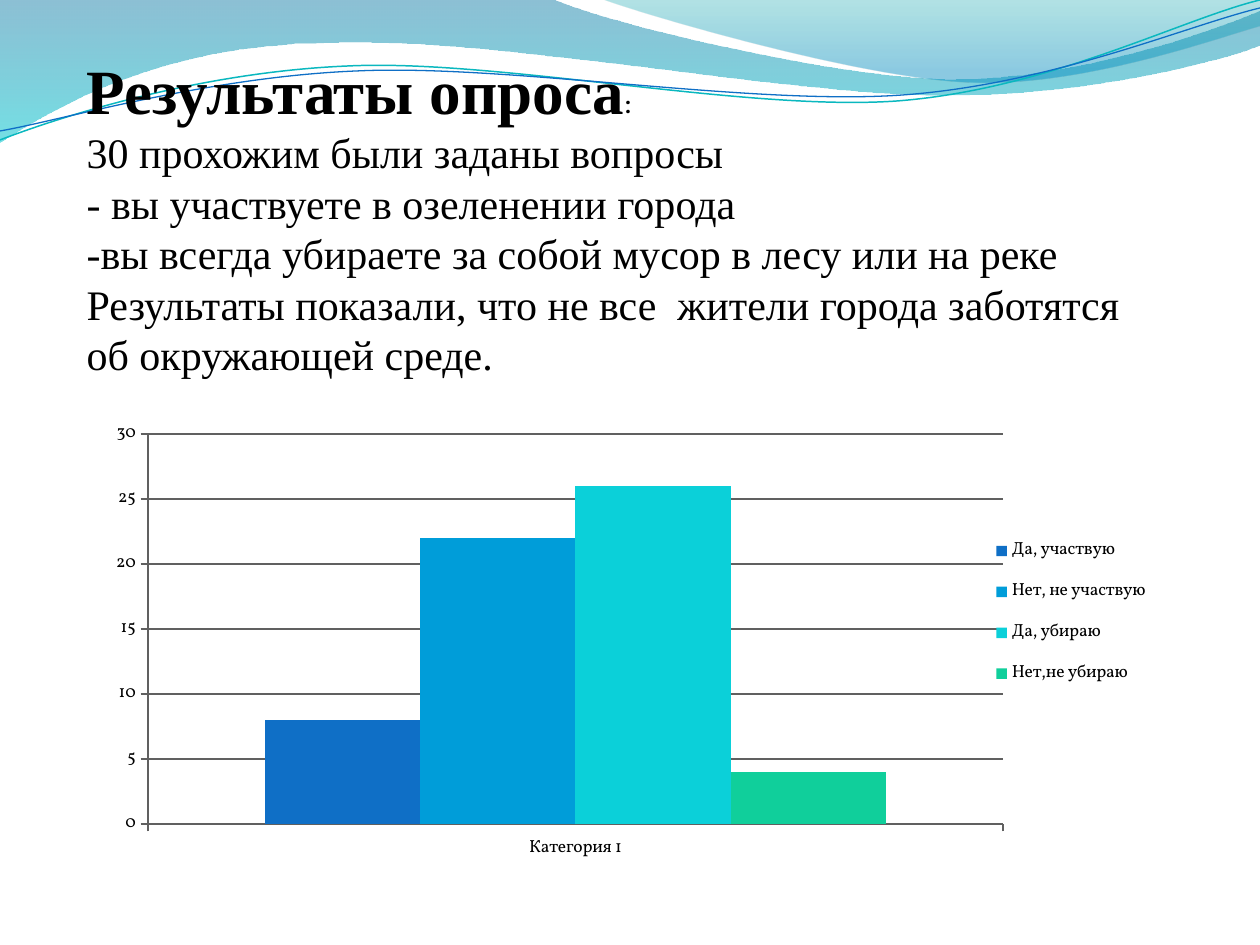
from dataclasses import dataclass

from lxml.etree import SubElement
from pptx import Presentation
from pptx.chart.data import CategoryChartData
from pptx.dml.color import RGBColor
from pptx.enum.chart import XL_CHART_TYPE as ChartType
from pptx.enum.chart import XL_LEGEND_POSITION as LegendPosition
from pptx.enum.chart import XL_TICK_MARK as TickMark
from pptx.enum.text import MSO_ANCHOR, MSO_AUTO_SIZE, PP_ALIGN
from pptx.oxml.ns import qn
from pptx.util import Pt

SCALE = 914400 / 126  # EMU per px


@dataclass(frozen=True)
class Theme:
    text: str = "000000"
    grid: str = "606060"
    serif: str = "Times New Roman"
    chart_font: str = "Vollkorn"
    title_size: int = 36
    colon_size: int = 18
    body_size: int = 24
    chart_size: int = 10
    bars: tuple = ("0F6FC6", "009DD9", "0BD0D9", "10CF9B")
    # Gradient stops: position, colour, opacity in percent
    wide_wave: tuple = ((0, "0074A1", 45), (1, "00C6CF", 55))
    corner_wave: tuple = ((0, "00A1A9", 30), (0.8, "008BBF", 45))
    upper_curve: tuple = ("0AB8BF", 0.85)
    lower_curve: tuple = ("0F6FC6", 0.75)


THEME = Theme()

# Outlines are a start point, then line ends (2 numbers) or Bézier curves (6 numbers).
WIDE_WAVE = [
    (0, 0), (554, 0), (600, 21, 837, 79, 955, 79), (1074, 79, 1207, 33, 1260, 11),
    (1260, 45), (1239, 55, 1096, 96, 940, 95), (784, 95, 481, 35, 324, 43),
    (163, 45, 58, 105, 0, 142),
]
CORNER_WAVE = [
    (604, 0), (641, 14, 859, 78, 969, 82), (1079, 87, 1211, 40, 1260, 26), (1260, 0),
]
UPPER_CURVE = [
    (0, 140), (60, 117, 199, 72, 349, 66), (498, 59, 747, 112, 898, 101),
    (1050, 89, 1182, 19, 1260, 0),
]
LOWER_CURVE = [
    (0, 131), (59, 121, 207, 77, 357, 71), (508, 64, 752, 106, 903, 95),
    (1053, 84, 1186, 26, 1260, 8),
]

HEADING = "Результаты опроса"
BODY_LINES = [
    "30 прохожим были заданы вопросы",
    "- вы участвуете в озеленении города",
    "-вы всегда убираете за собой мусор в лесу или на реке",
    "Результаты показали, что не все  жители города заботятся об окружающей среде.",
]
ANSWERS = [
    ("Да, участвую", 8), ("Нет, не участвую", 22),
    ("Да, убираю", 26), ("Нет,не убираю", 4),
]


def px(*lengths):
    return [round(length * SCALE) for length in lengths]


def rgb(value):
    return RGBColor.from_string(value)


def set_font(font, name, size, bold=False):
    font.name, font.size, font.bold = name, Pt(size), bold
    font.color.rgb = rgb(THEME.text)


def add_outline(slide, outline, box, closed):
    """Draw through all points, then join each curve's three lines into one Bézier."""
    left, top = box[:2]
    points = [
        (left + part[i], top + part[i + 1])
        for part in outline for i in range(0, len(part), 2)
    ]
    builder = slide.shapes.build_freeform(*points[0], scale=SCALE)
    builder.add_line_segments(points[1:], close=closed)
    shape = builder.convert_to_shape()
    shape.shadow.inherit = False
    lines = iter(list(shape._element.iter(qn("a:lnTo"))))
    for part in outline[1:]:
        line = next(lines)
        if len(part) == 6:
            curve = line.makeelement(qn("a:cubicBezTo"), {})
            line.addprevious(curve)
            for segment in (line, next(lines), next(lines)):
                curve.append(segment[0])
                segment.getparent().remove(segment)
    return shape


def add_wave(slide, outline, stops, box):
    shape = add_outline(slide, outline, box, closed=True)
    shape.line.fill.background()
    shape.fill.gradient()
    shape.fill.gradient_angle = 270
    for stop, (position, color, opacity) in zip(shape.fill.gradient_stops, stops):
        stop.position = position
        stop.color.rgb = rgb(color)
        color_element = stop._gs.find(qn("a:srgbClr"))
        SubElement(color_element, qn("a:alpha"), val=str(opacity * 1000))


def add_curve(slide, outline, style, box):
    shape = add_outline(slide, outline, box, closed=False)
    shape.fill.background()
    color, width = style
    shape.line.color.rgb = rgb(color)
    shape.line.width = Pt(width)


def add_header_waves(slide, box):
    add_wave(slide, WIDE_WAVE, THEME.wide_wave, box)
    add_wave(slide, CORNER_WAVE, THEME.corner_wave, box)
    add_curve(slide, UPPER_CURVE, THEME.upper_curve, box)
    add_curve(slide, LOWER_CURVE, THEME.lower_curve, box)


def place_title(slide, box):
    """Fill the title with the heading and the survey summary below it."""
    title = slide.shapes.title
    title.left, title.top, title.width, title.height = px(*box)
    frame = title.text_frame
    frame.text = "\n".join([HEADING, *BODY_LINES])
    frame.word_wrap = True
    frame.auto_size = MSO_AUTO_SIZE.SHAPE_TO_FIT_TEXT
    frame.vertical_anchor = MSO_ANCHOR.TOP
    for paragraph in frame.paragraphs:
        paragraph.alignment = PP_ALIGN.LEFT
        set_font(paragraph.runs[0].font, THEME.serif, THEME.body_size)

    heading = frame.paragraphs[0]
    set_font(heading.runs[0].font, THEME.serif, THEME.title_size, bold=True)
    colon = heading.add_run()
    colon.text = ":"
    set_font(colon.font, THEME.chart_font, THEME.colon_size)
    slide.shapes._spTree.append(title._element)  # in front of the waves


def set_layout(element, index, inner_box, box, target=None):
    """Fix a chart part at inner_box, which is relative to the chart's box."""
    for old in element.findall(qn("c:layout")):
        element.remove(old)
    layout = element.makeelement(qn("c:layout"), {})
    element.insert(index, layout)
    manual = SubElement(layout, qn("c:manualLayout"))
    if target:
        SubElement(manual, qn("c:layoutTarget"), val=target)
    for name in ("xMode", "yMode"):
        SubElement(manual, qn(f"c:{name}"), val="edge")
    for name, length, whole in zip("xywh", inner_box, box[2:] * 2):
        SubElement(manual, qn(f"c:{name}"), val=str(round(length / whole, 4)))


def add_survey_chart(slide, box):
    data = CategoryChartData()
    data.categories = ["Категория 1"]
    for name, count in ANSWERS:
        data.add_series(name, [count])
    chart = slide.shapes.add_chart(ChartType.COLUMN_CLUSTERED, *px(*box), data).chart
    chart.has_title = False
    set_font(chart.font, THEME.chart_font, THEME.chart_size)

    plot = chart.plots[0]
    plot.vary_by_categories = False
    plot.gap_width, plot.overlap = 150, 0
    for series, color in zip(plot.series, THEME.bars):
        series.format.fill.solid()
        series.format.fill.fore_color.rgb = rgb(color)

    value_axis = chart.value_axis
    value_axis.minimum_scale, value_axis.maximum_scale = 0, 30
    value_axis.major_unit = 5
    value_axis.has_major_gridlines = True
    for axis in (chart.category_axis, value_axis):
        axis.major_tick_mark = TickMark.OUTSIDE
    for part in (chart.category_axis, value_axis, value_axis.major_gridlines):
        part.format.line.color.rgb = rgb(THEME.grid)
        part.format.line.width = Pt(1)

    chart.has_legend = True
    chart.legend.position = LegendPosition.RIGHT
    chart.legend.include_in_layout = False
    plot_area = chart._chartSpace.find(f".//{qn('c:plotArea')}")
    set_layout(plot_area, 0, (54, 21, 855, 390), box, target="inner")
    set_layout(chart.legend._element, 1, (882, 109, 190, 181), box)


def main():
    presentation = Presentation()
    presentation.slide_width, presentation.slide_height = px(1260, 945)
    slide = presentation.slides.add_slide(presentation.slide_layouts[5])
    add_header_waves(slide, (0, 0, 1260, 142))
    place_title(slide, (74, 45, 1071, 344))
    add_survey_chart(slide, (94, 413, 1101, 456))
    presentation.save("out.pptx")


if __name__ == "__main__":
    main()
